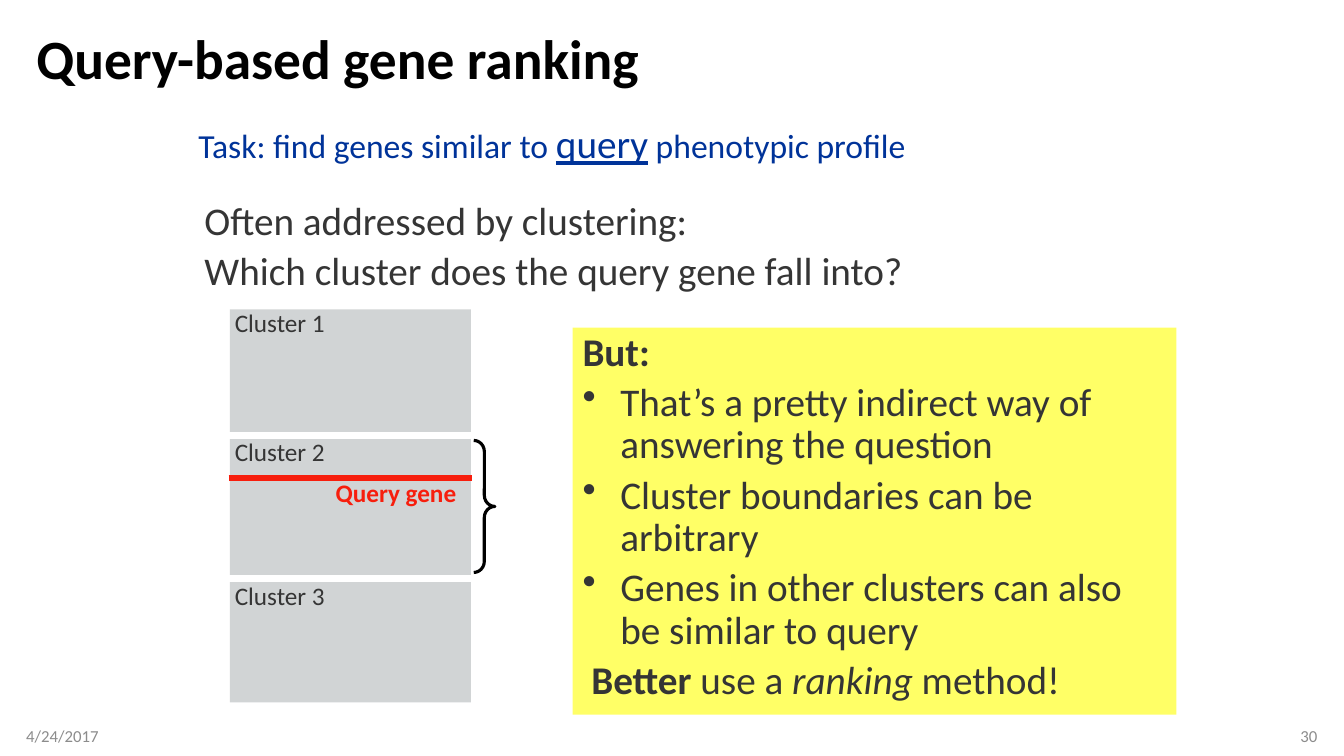
"""Build the slide on query-based gene ranking."""
import pptx
import pptx.util
import pptx.dml.color
import pptx.enum.shapes
import pptx.enum.text
import lxml.etree

Pt = pptx.util.Pt
Kind = pptx.enum.shapes.MSO_SHAPE
Align = pptx.enum.text.PP_ALIGN
Anchor = pptx.enum.text.MSO_ANCHOR
Fit = pptx.enum.text.MSO_AUTO_SIZE

GREY, DARK, RED, BLUE = "D1D4D5", "353535", "F71E0D", "003399"
TITLE = [[("Query-based gene ranking", {"bold": True})]]
DATE = [[("4/24/2017", {})]]
PAGE = [[("30", {})]]
TASK = [[
    ("Task: find genes similar to ", {}),
    ("query", {"size": Pt(28), "underline": True}),
    (" phenotypic profile", {}),
]]
LEAD = [
    [("Often addressed by clustering:", {})],
    [("Which cluster does the query gene fall into?", {})],
]
QUERY = [[("Query gene", {"bold": True})]]
BUT = [
    [("But:", {"bold": True})],
    [("That’s a pretty indirect way of answering the question", {})],
    [("Cluster boundaries can be arbitrary", {})],
    [("Genes in other clusters can also be similar to query", {})],
    [
        (" ", {}),
        ("Better", {"bold": True}),
        (" use a ", {}),
        ("ranking", {"italic": True}),
        (" method!", {}),
    ],
]
NAMES = [("Cluster 1", 218.2), ("Cluster 2", 310.3), ("Cluster 3", 413.3)]
CUTS = [(160.6, 311), (162.7, 413.3)]
CUT_W = 185
FOOT_Y, FOOT_W, FOOT_H = 511.2, 216, 28.8


def rgb(code):
    return pptx.dml.color.RGBColor.from_string(code)


def put(obj, vals):
    for key, val in vals.items():
        setattr(obj, key, val)


def write(shape, paras, size, color, hang=0, dots=(), gap=0.2,
          para_fmt=None, **frame_fmt):
    frame = shape.text_frame
    put(frame, {"auto_size": Fit.NONE, "word_wrap": True, **frame_fmt})
    for i, runs in enumerate(paras):
        para = frame.paragraphs[0] if i == 0 else frame.add_paragraph()
        put(para, {"alignment": Align.LEFT, "line_spacing": 0.9,
                   "space_before": Pt(size * gap if i else 0),
                   **(para_fmt or {})})
        props = para._p.get_or_add_pPr()
        if hang:
            props.set("marL", str(Pt(hang)))
            props.set("indent", str(Pt(-hang)))
        if i in dots:
            mark = lxml.etree.SubElement(props, pptx.oxml.ns.qn("a:buChar"))
            mark.set("char", "•")
        for text, fmt in runs:
            run = para.add_run()
            run.text = text
            put(run.font, {"name": "Calibri", "size": Pt(size), **fmt})
            run.font.color.rgb = rgb(color)


def label(shapes, box, *args, **kw):
    write(shapes.add_textbox(*map(Pt, box)), *args, **kw)


def block(shapes, kind, box, fill=None, line=None):
    shape = shapes.add_shape(kind, *map(Pt, box))
    shape.shadow.inherit = False
    if fill:
        shape.fill.solid()
        shape.fill.fore_color.rgb = rgb(fill)
    else:
        shape.fill.background()
    if line:
        shape.line.color.rgb = rgb(line)
        shape.line.width = Pt(2.25)
    else:
        shape.line.fill.background()
    return shape


def rule(shapes, x, y, width, color):
    line = shapes.add_connector(pptx.enum.shapes.MSO_CONNECTOR.STRAIGHT,
                                Pt(x), Pt(y), Pt(x + width), Pt(y))
    line.line.color.rgb = rgb(color)
    line.line.width = Pt(4.5)
    props = line._element.spPr
    lxml.etree.SubElement(props, pptx.oxml.ns.qn("a:effectLst"))


def main():
    deck = pptx.Presentation()
    put(deck, {"slide_width": Pt(960), "slide_height": Pt(540)})
    slide = deck.slides.add_slide(deck.slide_layouts[5])
    shapes = slide.shapes

    title = shapes.title
    put(title, {"left": Pt(18.7), "top": Pt(18), "width": Pt(922.3),
                "height": Pt(51.8)})
    write(title, TITLE, 39.6, "000000", vertical_anchor=Anchor.MIDDLE)

    foot = {"vertical_anchor": Anchor.MIDDLE}
    label(shapes, (18.7, FOOT_Y, FOOT_W, FOOT_H), DATE, 12, "8C8C8C",
          para_fmt={"line_spacing": 1}, margin_left=0, **foot)
    label(shapes, (725, FOOT_Y, FOOT_W, FOOT_H), PAGE, 12, "8C8C8C",
          para_fmt={"line_spacing": 1, "alignment": Align.RIGHT},
          margin_right=0, **foot)

    label(shapes, (134.6, 85.7, 699.8, 47.5), TASK, 24, BLUE, hang=18)
    label(shapes, (139, 140.4, 522.7, 74.2), LEAD, 28, DARK, hang=27,
          word_wrap=False)

    block(shapes, Kind.RECTANGLE, (164.2, 221, 172.1, 280.8), GREY)
    for x, y in CUTS:
        rule(shapes, x, y, CUT_W, "FFFFFF")
    for name, y in NAMES:
        label(shapes, (160.6, y, 79.9, 26.6), [[(name, {})]], 18, DARK,
              hang=27, word_wrap=False)

    rule(shapes, 163.4, 341.3, 173.5, RED)
    brace = block(shapes, Kind.RIGHT_BRACE, (338.4, 314.6, 15.1, 94.3),
                  line="000000")
    brace.adjustments[0] = 0.525
    brace.adjustments[1] = 0.5
    label(shapes, (232.6, 339.8, 107.3, 26.6), QUERY, 18, RED, hang=27,
          word_wrap=False)

    panel = block(shapes, Kind.RECTANGLE, (409, 234, 431.3, 276.5), "FFFF66")
    write(panel, BUT, 28, DARK, hang=27, dots=(1, 2, 3),
          vertical_anchor=Anchor.TOP)
    deck.save("out.pptx")


if __name__ == "__main__":
    main()
